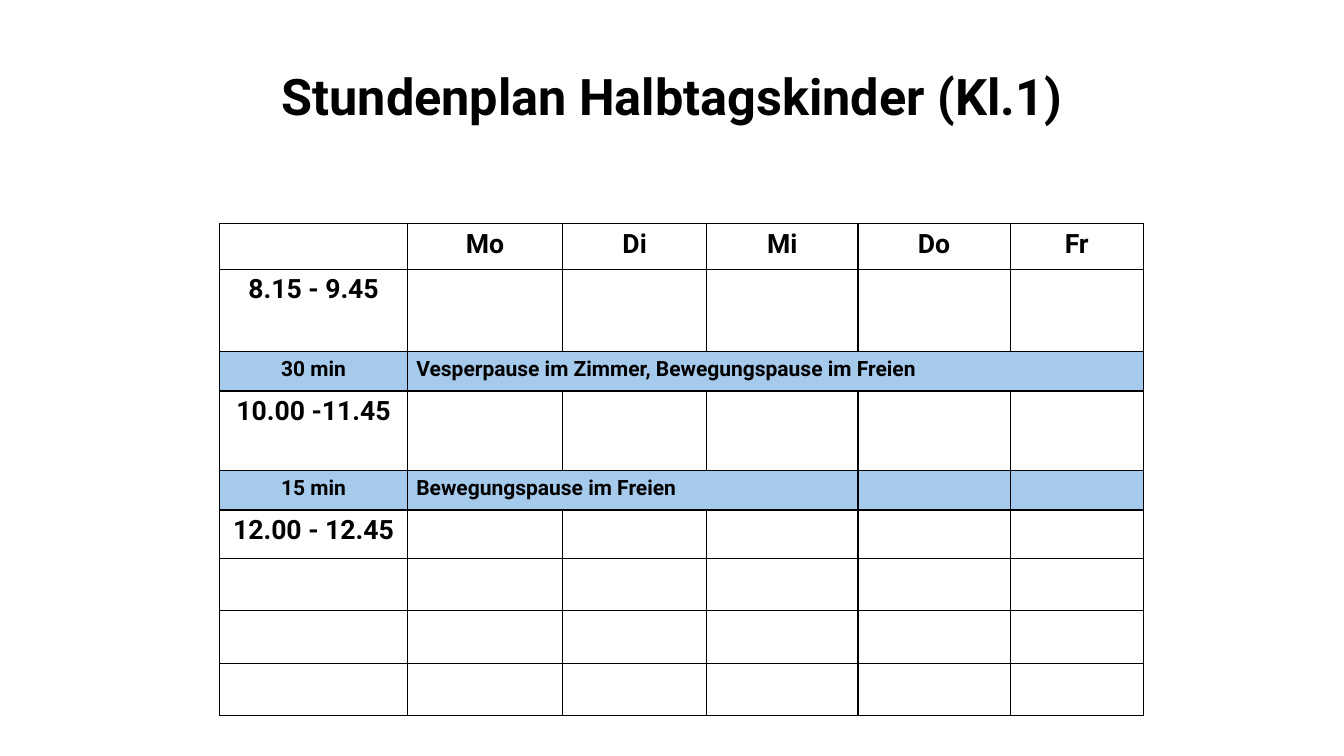
import pptx
import pptx.dml.color
import pptx.enum.text
import pptx.oxml
import pptx.oxml.ns
import pptx.util
from pptx.util import Inches

COLORS = {"text": "000000", "border": "000000", "lesson": "FFFFFF", "break": "A6CAEC"}
FONT = "Roboto"
CENTER = pptx.enum.text.PP_ALIGN.CENTER
LEFT = pptx.enum.text.PP_ALIGN.LEFT

COLUMN_WIDTHS = [1.86, 1.54, 1.43, 1.5, 1.51, 1.32]
ROW_HEIGHTS = [0.45, 0.82, 0.39, 0.79, 0.39, 0.48, 0.52, 0.52, 0.52]
DAYS = ["Mo", "Di", "Mi", "Do", "Fr"]
LESSONS = {1: "8.15 - 9.45", 3: "10.00 -11.45", 5: "12.00 - 12.45"}
BREAKS = {
    2: ("30 min", "Vesperpause im Zimmer, Bewegungspause im Freien", 5),
    4: ("15 min", "Bewegungspause im Freien", 3),
}


def color(name):
    return pptx.dml.color.RGBColor.from_string(COLORS[name])


def write(text_frame, text, size, alignment):
    paragraph = text_frame.paragraphs[0]
    paragraph.alignment = alignment
    run = paragraph.add_run()
    run.text = text
    run.font.name = FONT
    run.font.size = pptx.util.Pt(size)
    run.font.bold = True
    run.font.color.rgb = color("text")
    return paragraph


def add_title(slide, text):
    box = slide.shapes.add_textbox(Inches(1.89), Inches(0.55), Inches(9.55), Inches(0.75))
    box.text_frame.word_wrap = True
    box.text_frame.vertical_anchor = pptx.enum.text.MSO_ANCHOR.BOTTOM
    paragraph = write(box.text_frame, text, 36, CENTER)
    paragraph.line_spacing = 0.9


def add_borders(cell):
    properties = cell._tc.get_or_add_tcPr()
    for position, side in enumerate(("lnL", "lnR", "lnT", "lnB")):
        border = pptx.oxml.parse_xml(
            f'<a:{side} {pptx.oxml.ns.nsdecls("a")} w="12700"><a:solidFill>'
            f'<a:srgbClr val="{COLORS["border"]}"/></a:solidFill></a:{side}>'
        )
        properties.insert(position, border)


def format_cell(cell, fill):
    cell.margin_left = cell.margin_right = Inches(0.09)
    cell.margin_top = cell.margin_bottom = Inches(0)
    cell.fill.solid()
    cell.fill.fore_color.rgb = color(fill)
    add_borders(cell)


def write_cell(cell, text, size, alignment=CENTER):
    cell.margin_top = cell.margin_bottom = Inches(0.05)
    write(cell.text_frame, text, size, alignment)


def add_timetable(slide):
    frame = slide.shapes.add_table(
        len(ROW_HEIGHTS), len(COLUMN_WIDTHS), Inches(2.18), Inches(2.22),
        Inches(sum(COLUMN_WIDTHS)), Inches(sum(ROW_HEIGHTS)),
    )
    table = frame.table
    table.first_row = False
    table.horz_banding = False
    for column, width in zip(table.columns, COLUMN_WIDTHS):
        column.width = Inches(width)
    for index, height in enumerate(ROW_HEIGHTS):
        table.rows[index].height = Inches(height)
        for cell in table.rows[index].cells:
            format_cell(cell, "break" if index in BREAKS else "lesson")

    for column, day in enumerate(DAYS, start=1):
        write_cell(table.cell(0, column), day, 19)
    for row, time in LESSONS.items():
        write_cell(table.cell(row, 0), time, 19)
    for row, (duration, activity, days) in BREAKS.items():
        write_cell(table.cell(row, 0), duration, 15)
        table.cell(row, 1).merge(table.cell(row, days))
        write_cell(table.cell(row, 1), activity, 15, LEFT)


def main():
    presentation = pptx.Presentation()
    presentation.slide_width = Inches(13.33)
    presentation.slide_height = Inches(7.5)
    slide = presentation.slides.add_slide(presentation.slide_layouts[6])
    add_title(slide, "Stundenplan Halbtagskinder (Kl.1)")
    add_timetable(slide)
    presentation.save("out.pptx")


if __name__ == "__main__":
    main()
